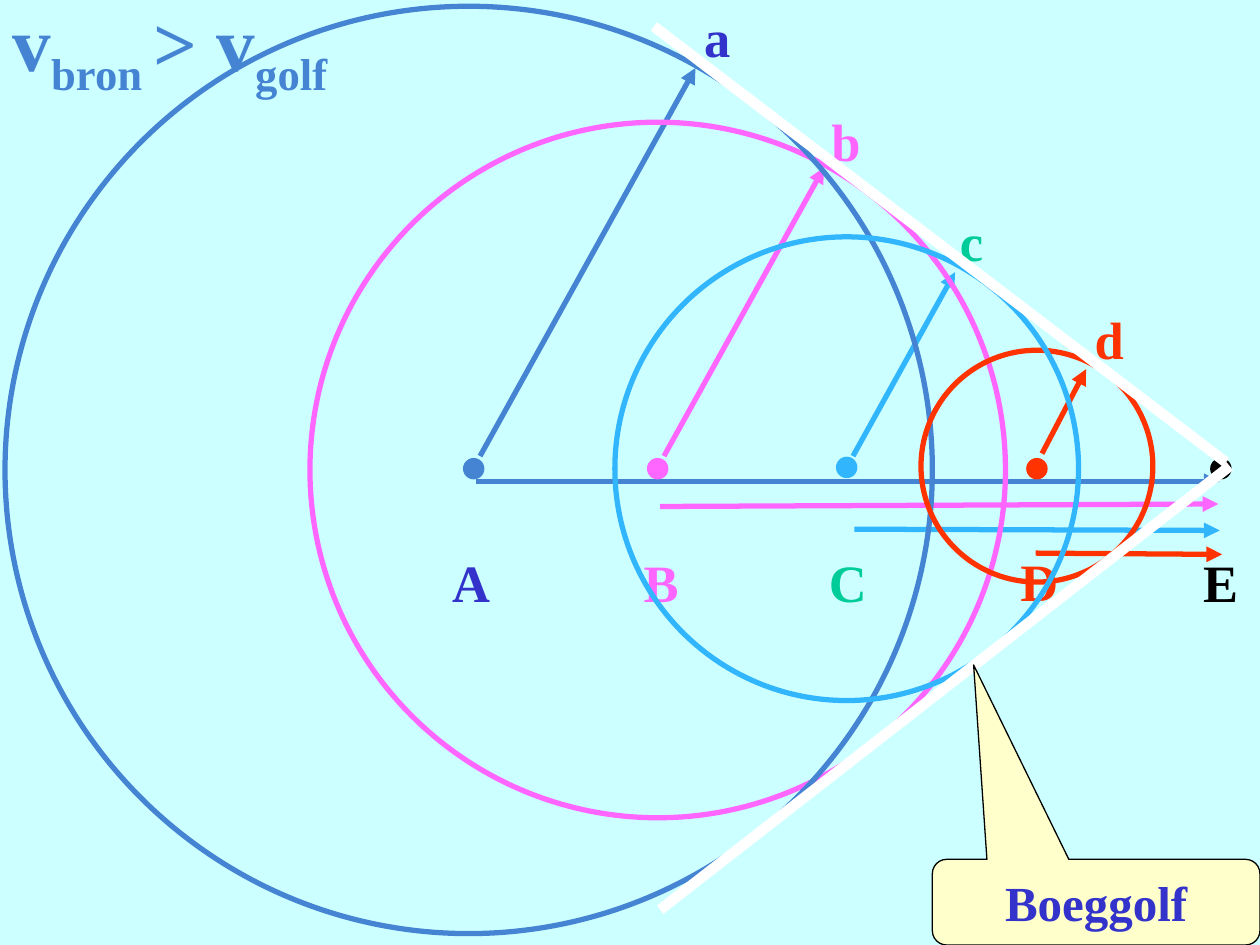
from lxml.etree import SubElement
from pptx import Presentation
from pptx.dml.color import RGBColor
from pptx.enum.shapes import MSO_CONNECTOR, MSO_SHAPE
from pptx.enum.text import MSO_ANCHOR, MSO_AUTO_SIZE, PP_ALIGN
from pptx.oxml.ns import qn
from pptx.util import Inches, Pt

FONT = "Times New Roman"
PALE_CYAN = RGBColor(0xCC, 0xFF, 0xFF)
PALE_YELLOW = RGBColor(0xFF, 0xFF, 0xCC)
BLUE = RGBColor(0x45, 0x84, 0xD3)
NAVY = RGBColor(0x33, 0x33, 0xCC)
PINK = RGBColor(0xFF, 0x66, 0xFF)
SKY = RGBColor(0x31, 0xB6, 0xFD)
GREEN = RGBColor(0x00, 0xCC, 0x99)
RED = RGBColor(0xFF, 0x33, 0x00)
BLACK = RGBColor(0, 0, 0)
WHITE = RGBColor(0xFF, 0xFF, 0xFF)

# (text, is subscript)
TITLE = [("v", False), ("bron ", True), ("> v", False), ("golf", True)]

# (text, left, top, width, colour)
LABELS = [
    ("E", 9.45, 4.32, 0.42, BLACK),
    ("C", 6.48, 4.32, 0.58, GREEN), ("c", 7.52, 1.61, 0.42, GREEN),
    ("B", 5.01, 4.32, 0.42, PINK), ("b", 6.5, 0.82, 0.42, PINK),
    ("D", 8, 4.31, 0.5, RED), ("d", 8.59, 2.39, 0.5, RED),
    ("A", 3.49, 4.32, 0.58, NAVY), ("a", 5.49, -0.01, 0.42, NAVY),
]

# (colour, from, to): the wave's path, then the source's path
ARROWS = [
    (RED, (8.27, 3.6), (8.62, 2.93)), (RED, (8.22, 4.39), (9.7, 4.4)),
    (BLUE, (3.81, 3.62), (5.52, 0.54)), (BLUE, (3.78, 3.82), (9.68, 3.82)),
    (PINK, (5.27, 3.62), (6.54, 1.33)), (PINK, (5.24, 4.02), (9.67, 4)),
    (SKY, (6.77, 3.62), (7.58, 2.16)), (SKY, (6.78, 4.2), (9.68, 4.21)),
]

# (colour, wave centre, source dot centre, time steps since emission)
RADIUS_STEP = 0.92
DOT_RADIUS = 0.08
WAVES = [
    (PINK, (5.22, 3.73), (5.22, 3.72), 3),
    (BLUE, (3.72, 3.73), (3.76, 3.72), 4),
    (RED, (8.23, 3.7), (8.23, 3.72), 1),
    (SKY, (6.72, 3.72), (6.72, 3.71), 2),
]
DOT_E = (9.69, 3.72)

BOW_LINES = [((9.73, 3.67), (5.19, 0.21)), ((9.76, 3.7), (5.24, 7.22))]


def add_run(p, text, size, color):
    r = p.add_run()
    r.text = text
    for name, value in {"name": FONT, "size": Pt(size), "bold": True}.items():
        setattr(r.font, name, value)
    r.font.color.rgb = color
    return r


def add_circle(s, center, radius, color, width, filled):
    x, y = center
    sp = s.shapes.add_shape(MSO_SHAPE.OVAL, Inches(x - radius), Inches(y - radius),
                            Inches(2 * radius), Inches(2 * radius))
    sp.shadow.inherit = False
    if filled:
        sp.fill.solid()
        sp.fill.fore_color.rgb = color
    else:
        sp.fill.background()
    sp.line.color.rgb = color
    sp.line.width = Pt(width)


def add_line(s, start, end, color, width, arrow=False):
    c = s.shapes.add_connector(MSO_CONNECTOR.STRAIGHT, *map(Inches, start + end))
    c.line.color.rgb = color
    c.line.width = Pt(width)
    if arrow:
        SubElement(c.line._get_or_add_ln(), qn("a:tailEnd"), type="triangle")
    SubElement(c._element.spPr, qn("a:effectLst"))


def add_title(s):
    title = s.shapes.title
    box = {"left": 0, "top": 0, "width": 3.83, "height": 0.75}
    for name, value in box.items():
        setattr(title, name, Inches(value))
    tf = title.text_frame
    tf.auto_size = MSO_AUTO_SIZE.NONE
    tf.vertical_anchor = MSO_ANCHOR.MIDDLE
    p = tf.paragraphs[0]
    p.alignment = PP_ALIGN.LEFT
    for text, subscript in TITLE:
        r = add_run(p, text, 44, BLUE)
        if subscript:
            r.font._element.set("baseline", "-25000")


def add_label(s, text, left, top, width, color):
    tf = s.shapes.add_textbox(Inches(left), Inches(top), Inches(width), Inches(0.6)).text_frame
    tf.word_wrap = True
    add_run(tf.paragraphs[0], text, 30, color)


def add_callout(s):
    sp = s.shapes.add_shape(MSO_SHAPE.ROUNDED_RECTANGULAR_CALLOUT,
                            Inches(7.4), Inches(6.82), Inches(2.6), Inches(0.68))
    for i, value in enumerate((-0.374, -2.769, 0.167)):
        sp.adjustments[i] = value
    sp.shadow.inherit = False
    sp.fill.solid()
    sp.fill.fore_color.rgb = PALE_YELLOW
    sp.line.color.rgb = BLACK
    sp.line.width = Pt(0.75)
    sp.text_frame.vertical_anchor = MSO_ANCHOR.MIDDLE
    p = sp.text_frame.paragraphs[0]
    p.alignment = PP_ALIGN.CENTER
    add_run(p, "Boeggolf", 28, NAVY)


def main():
    prs = Presentation()
    prs.slide_width, prs.slide_height = Inches(10), Inches(7.5)
    s = prs.slides.add_slide(prs.slide_layouts[0])
    s.background.fill.solid()
    s.background.fill.fore_color.rgb = PALE_CYAN
    subtitle = s.placeholders[1]._element
    subtitle.getparent().remove(subtitle)

    add_title(s)
    for label in LABELS:
        add_label(s, *label)
    for color, start, end in ARROWS:
        add_line(s, start, end, color, 3, arrow=True)
    add_circle(s, DOT_E, DOT_RADIUS, BLACK, 0.75, filled=True)
    for color, center, dot, steps in WAVES:
        add_circle(s, center, steps * RADIUS_STEP, color, 3, filled=False)
        add_circle(s, dot, DOT_RADIUS, color, 0.75, filled=True)
    for start, end in BOW_LINES:
        add_line(s, start, end, WHITE, 6)
    add_callout(s)
    prs.save("out.pptx")


if __name__ == "__main__":
    main()
